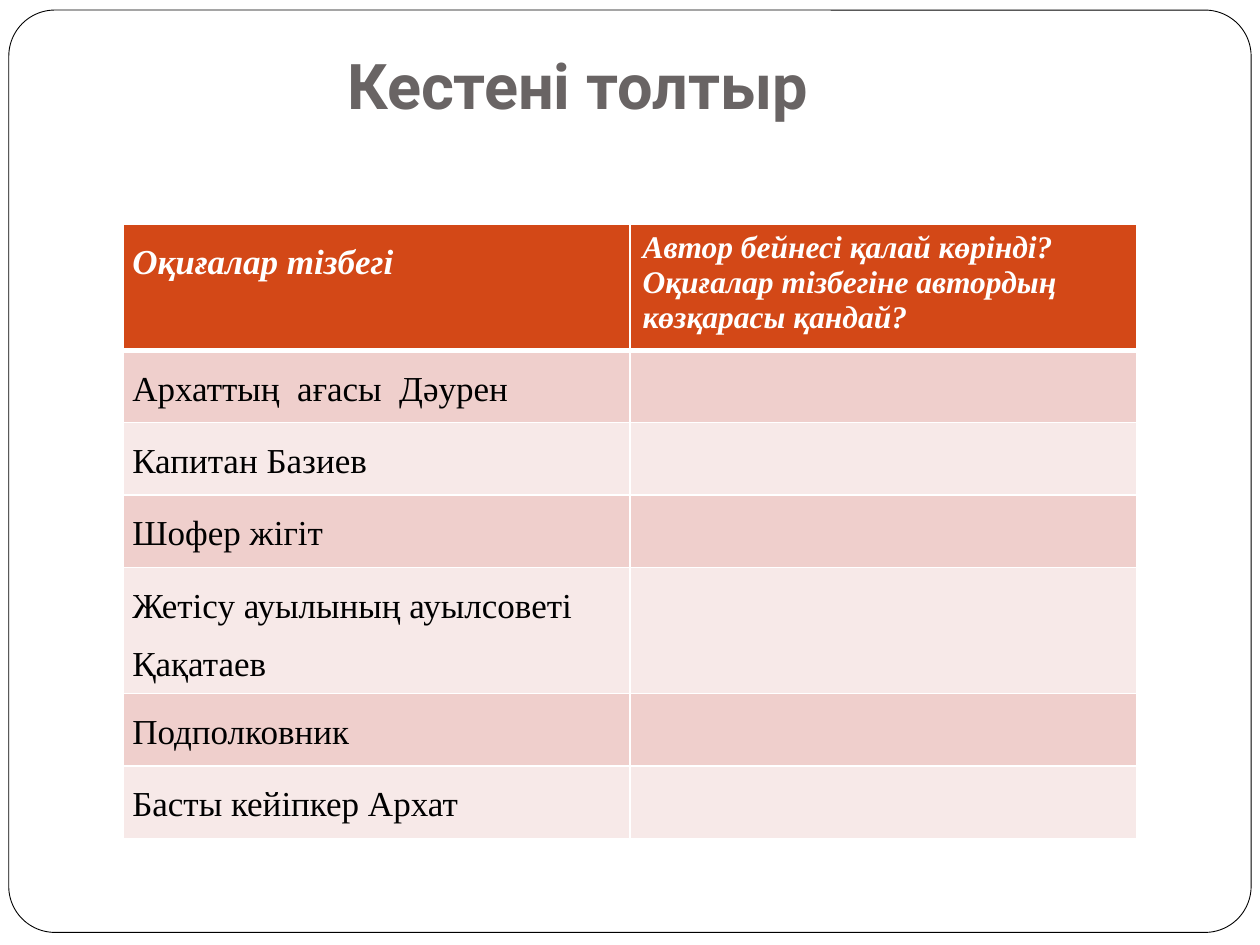
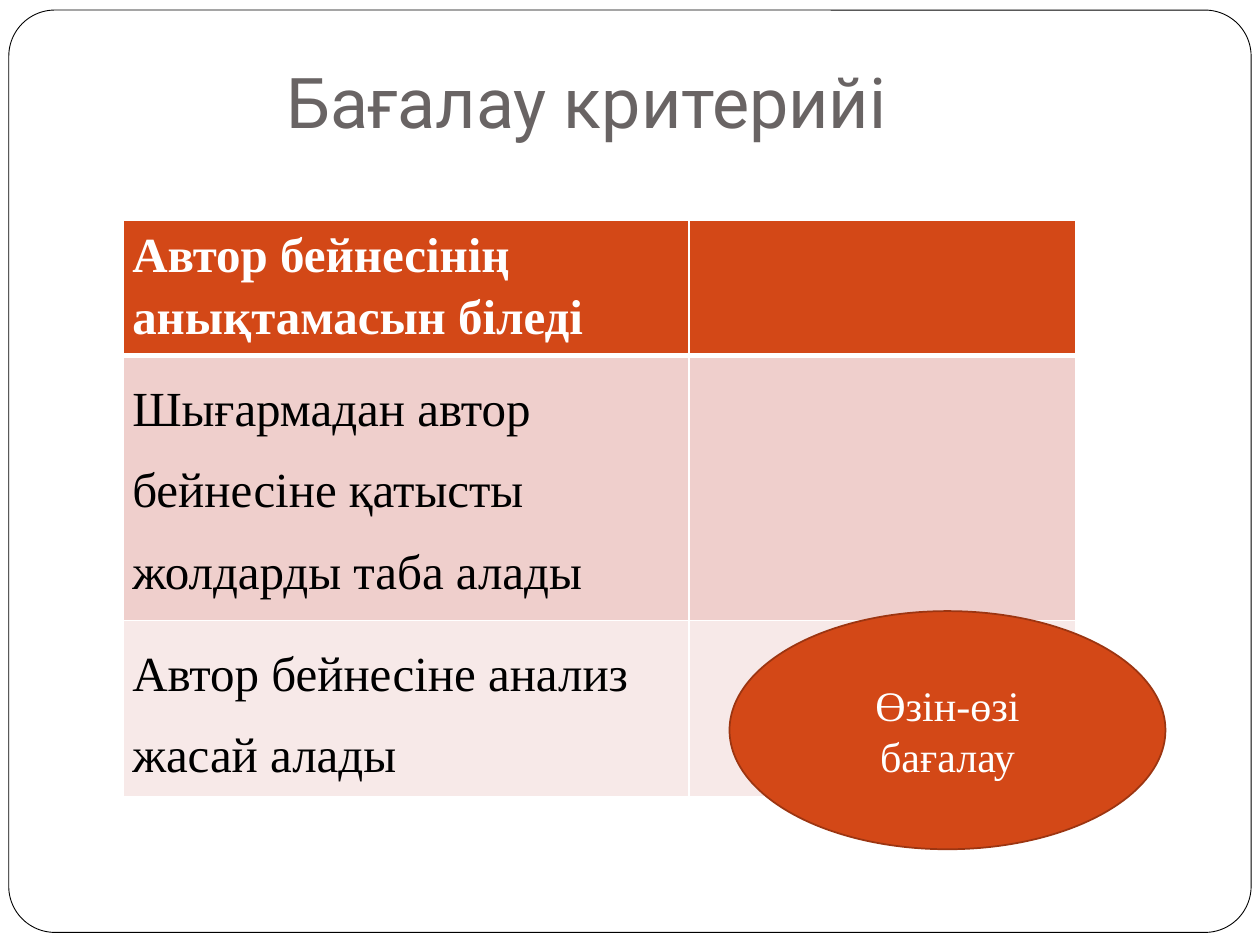
from dataclasses import dataclass

from lxml import etree
from pptx import Presentation
from pptx import util as u
from pptx.dml.color import RGBColor
from pptx.enum import shapes, text
from pptx.oxml import ns


@dataclass(frozen=True)
class Theme:
    title_font: str = "Roboto"
    body_font: str = "Times New Roman"
    white: str = "FFFFFF"
    black: str = "000000"
    title: str = "696464"
    accent: str = "D34817"
    accent_edge: str = "9C3511"
    bands: tuple = ("EFCFCC", "F7E9E8")
    badge_size: int = 24
    thin: int = 1
    thick: int = 3


THEME = Theme()

EVENT_ROWS = [
    ("Оқиғалар тізбегі",
     "Автор бейнесі қалай көрінді? Оқиғалар тізбегіне автордың көзқарасы қандай?"),
    ("Архаттың  ағасы  Дәурен", ""),
    ("Капитан Базиев", ""),
    ("Шофер жігіт", ""),
    ("Жетісу ауылының ауылсоветі Қақатаев", ""),
    ("Подполковник", ""),
    ("Басты кейіпкер Архат", ""),
]
CRITERIA_ROWS = [
    ("Автор бейнесінің анықтамасын біледі", ""),
    ("Шығармадан автор бейнесіне қатысты жолдарды таба алады", ""),
    ("Автор бейнесіне анализ жасай алады", ""),
]


def inches(values):
    return [u.Inches(value) for value in values]


def style_text(frame, size, color, font=THEME.body_font, bold=False,
               italic=False, align=None, spacing=None):
    for para in frame.paragraphs:
        para.alignment = align
        para.line_spacing = spacing
        for span in para.runs:
            span.font.name = font
            span.font.size = u.Pt(size)
            span.font.bold = bold
            span.font.italic = italic
            span.font.color.rgb = RGBColor.from_string(color)


def add_panel(page, kind, box, fill, edge, width):
    panel = page.shapes.add_shape(kind, *inches(box))
    panel.shadow.inherit = False
    panel.fill.solid()
    panel.fill.fore_color.rgb = RGBColor.from_string(fill)
    panel.line.color.rgb = RGBColor.from_string(edge)
    panel.line.width = u.Pt(width)
    return panel


def add_page(deck):
    """Blank page with the rounded outline that every slide shares."""
    page = deck.slides.add_slide(deck.slide_layouts[6])
    outline = add_panel(page, shapes.MSO_SHAPE.ROUNDED_RECTANGLE,
                        (0.07, 0.08, 9.86, 7.32), THEME.white, THEME.black, 0.5)
    outline.adjustments[0] = 0.05
    return page


def add_title(page, box, wording, size, bold=False):
    frame = page.shapes.add_textbox(*inches(box)).text_frame
    frame.word_wrap = True
    frame.vertical_anchor = text.MSO_ANCHOR.BOTTOM
    frame.margin_bottom = u.Inches(0.1)
    frame.text = wording
    style_text(frame, size, THEME.title, THEME.title_font, bold,
               align=text.PP_ALIGN.CENTER)


def add_borders(cell, widths):
    properties = cell._tc.get_or_add_tcPr()
    for side, width in widths.items():
        line = etree.SubElement(properties, ns.qn(f"a:ln{side}"), w=str(u.Pt(width)))
        fill = etree.SubElement(line, ns.qn("a:solidFill"))
        etree.SubElement(fill, ns.qn("a:srgbClr"), val=THEME.white)


def add_table(page, corner, columns, heights, rows, size,
              header_spacing, header_italic=False):
    """Banded table; the first column is tight, the second has normal margins."""
    box = (*corner, sum(columns), sum(heights))
    table = page.shapes.add_table(len(rows), len(columns), *inches(box)).table
    for column, width in zip(table.columns, columns):
        column.width = u.Inches(width)
    for index, (row, height, wordings) in enumerate(zip(table.rows, heights, rows)):
        row.height = u.Inches(height)
        header = index == 0
        band = THEME.accent if header else THEME.bands[(index - 1) % 2]
        borders = {
            "L": THEME.thin,
            "R": THEME.thin,
            "T": THEME.thick if index == 1 else THEME.thin,
            "B": THEME.thick if header else THEME.thin,
        }
        for position, (cell, wording) in enumerate(zip(row.cells, wordings)):
            add_borders(cell, borders)
            cell.fill.solid()
            cell.fill.fore_color.rgb = RGBColor.from_string(band)
            cell.text = wording
            first = position == 0
            if first:
                cell.margin_left = cell.margin_right = u.Inches(0.07)
                cell.margin_top = cell.margin_bottom = 0
            spacing = header_spacing if header else 1.5
            style_text(cell.text_frame, size if first else size - 2,
                       THEME.white if header else THEME.black,
                       bold=header, italic=header and header_italic,
                       spacing=spacing if first else None)


def add_badge(page, box, wording):
    badge = add_panel(page, shapes.MSO_SHAPE.OVAL, box,
                      THEME.accent, THEME.accent_edge, 1)
    frame = badge.text_frame
    frame.word_wrap = True
    frame.vertical_anchor = text.MSO_ANCHOR.MIDDLE
    frame.text = wording
    style_text(frame, THEME.badge_size, THEME.white, align=text.PP_ALIGN.CENTER)


def build_events(deck):
    page = add_page(deck)
    add_title(page, (0.5, 0.3, 8.17, 0.77), "Кестені толтыр", 36, bold=True)
    tall, low = 0.99, 0.575
    add_table(page, (0.98, 1.78), (4.02, 4.02),
              (tall, low, low, low, tall, low, low),
              EVENT_ROWS, 20, 1.5, header_italic=True)


def build_criteria(deck):
    page = add_page(deck)
    add_title(page, (0.5, 0.3, 8.17, 0.93), " Бағалау критерийі", 40)
    add_table(page, (0.98, 1.75), (4.49, 3.07), (0.98, 1.93, 1.29),
              CRITERIA_ROWS, 28, 1.15)
    add_badge(page, (5.79, 4.85, 3.46, 1.89), "Өзін-өзі бағалау")


def main():
    deck = Presentation()
    deck.slide_width, deck.slide_height = inches((10, 7.5))
    build_events(deck)
    build_criteria(deck)
    deck.save("out.pptx")


if __name__ == "__main__":
    main()
